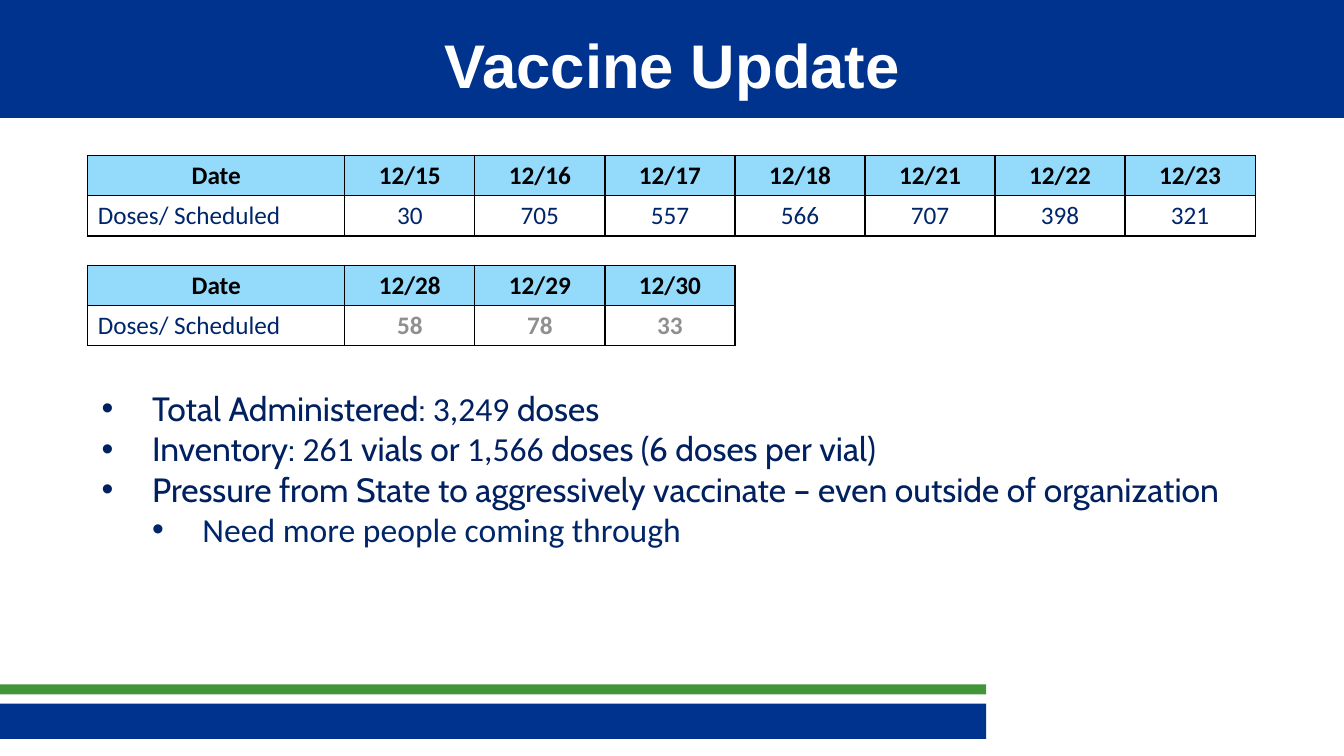
from lxml import etree
from pptx import Presentation
from pptx.dml.color import RGBColor
from pptx.enum.shapes import MSO_SHAPE
from pptx.enum.text import MSO_ANCHOR, PP_ALIGN
from pptx.oxml.ns import qn
from pptx.util import Inches, Pt

COLORS = {
    "blue": "00338E",
    "green": "439539",
    "header": "93DAFB",
    "navy": "002060",
    "body": "00266A",
    "gray": "8F8F8F",
    "white": "FFFFFF",
    "black": "000000",
}
BULLETS = [
    (0, "navy", [("Total Administered: ", "Cabin"), ("3,249", "Calibri"), (" doses", "Cabin")]),
    (0, "navy", [("Inventory: ", "Cabin"), ("261", "Calibri"), (" vials or ", "Cabin"),
                 ("1,566", "Calibri"), (" doses (6 doses per vial)", "Cabin")]),
    (0, "navy", [("Pressure from State to aggressively vaccinate – even outside of organization", "Cabin")]),
    (1, "body", [("Need more people coming through", "Calibri")]),
]


def color(name):
    return RGBColor.from_string(COLORS[name])


def style_font(font, name, size, color_name, bold=False):
    font.name = name
    font.size = Pt(size)
    font.bold = bold
    font.color.rgb = color(color_name)


def add_bar(slide, left, top, width, height, fill):
    shape = slide.shapes.add_shape(
        MSO_SHAPE.RECTANGLE, Inches(left), Inches(top), Inches(width), Inches(height))
    shape.shadow.inherit = False
    shape.fill.solid()
    shape.fill.fore_color.rgb = color(fill)
    shape.line.fill.background()


def add_text_frame(slide, left, top, width, height):
    box = slide.shapes.add_textbox(Inches(left), Inches(top), Inches(width), Inches(height))
    box.text_frame.word_wrap = True
    return box.text_frame


def add_title(slide, text):
    frame = add_text_frame(slide, 0.67, 0.17, 12, 0.92)
    frame.vertical_anchor = MSO_ANCHOR.MIDDLE
    frame.text = text
    paragraph = frame.paragraphs[0]
    paragraph.alignment = PP_ALIGN.CENTER
    style_font(paragraph.runs[0].font, "Arial", 44, "white", True)


def add_bullets(slide, bullets):
    frame = add_text_frame(slide, 0.41, 3.8, 12.41, 1.7)
    for index, (level, color_name, pieces) in enumerate(bullets):
        paragraph = frame.paragraphs[0] if index == 0 else frame.add_paragraph()
        paragraph.level = level
        properties = paragraph._p.get_or_add_pPr()
        properties.set("marL", str(Inches(1 + 0.5 * level)))
        properties.set("indent", str(Inches(-0.5)))
        etree.SubElement(properties, qn("a:buFont")).set("typeface", "Arial")
        etree.SubElement(properties, qn("a:buChar")).set("char", "•")
        for text, font_name in pieces:
            run = paragraph.add_run()
            run.text = text
            style_font(run.font, font_name, 24, color_name)


def add_borders(cell):
    properties = cell._tc.get_or_add_tcPr()
    for position, side in enumerate(("a:lnL", "a:lnR", "a:lnT", "a:lnB")):
        line = etree.Element(qn(side), w=str(Pt(1)))
        fill = etree.SubElement(line, qn("a:solidFill"))
        etree.SubElement(fill, qn("a:srgbClr")).set("val", COLORS["black"])
        properties.insert(position, line)


def add_dose_table(slide, top, doses, dose_color, dose_bold):
    rows = [["Date", *doses], ["Doses/ Scheduled", *doses.values()]]
    widths = [2.55] + [1.29] * len(doses)
    table = slide.shapes.add_table(
        2, len(widths), Inches(0.87), Inches(top), Inches(sum(widths)), Inches(0.8)).table
    for column, width in zip(table.columns, widths):
        column.width = Inches(width)
    for row_index, values in enumerate(rows):
        table.rows[row_index].height = Inches(0.4)
        for column_index, value in enumerate(values):
            cell = table.cell(row_index, column_index)
            is_header = row_index == 0
            is_label = not is_header and column_index == 0
            cell.fill.solid()
            cell.fill.fore_color.rgb = color("header" if is_header else "white")
            add_borders(cell)
            cell.vertical_anchor = MSO_ANCHOR.MIDDLE
            cell.text_frame.text = str(value)
            paragraph = cell.text_frame.paragraphs[0]
            paragraph.alignment = PP_ALIGN.LEFT if is_label else PP_ALIGN.CENTER
            if is_header:
                color_name, bold = "black", True
            elif is_label:
                color_name, bold = "body", False
            else:
                color_name, bold = dose_color, dose_bold
            style_font(paragraph.runs[0].font, "Calibri", 18, color_name, bold)


def main():
    presentation = Presentation()
    presentation.slide_width = Inches(13.33)
    presentation.slide_height = Inches(7.5)
    slide = presentation.slides.add_slide(presentation.slide_layouts[6])
    add_bar(slide, -0.03, 6.98, 9.81, 0.35, "blue")
    add_bar(slide, -0.03, 6.79, 9.81, 0.1, "green")
    add_bar(slide, 0, 0, 13.33, 1.17, "blue")
    add_title(slide, "Vaccine Update")
    add_bullets(slide, BULLETS)
    first_doses = {"12/15": 30, "12/16": 705, "12/17": 557, "12/18": 566,
                   "12/21": 707, "12/22": 398, "12/23": 321}
    add_dose_table(slide, 1.54, first_doses, "body", False)
    add_dose_table(slide, 2.63, {"12/28": 58, "12/29": 78, "12/30": 33}, "gray", True)
    presentation.save("out.pptx")


if __name__ == "__main__":
    main()
